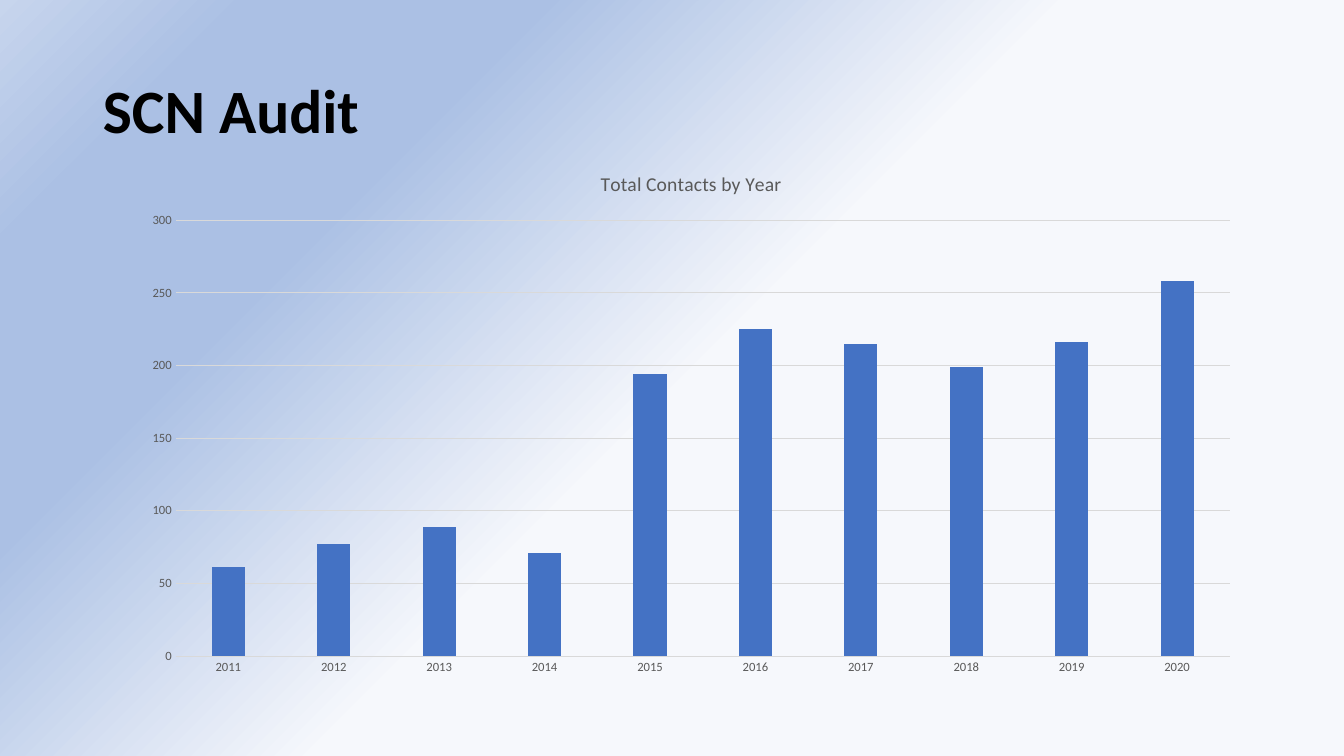
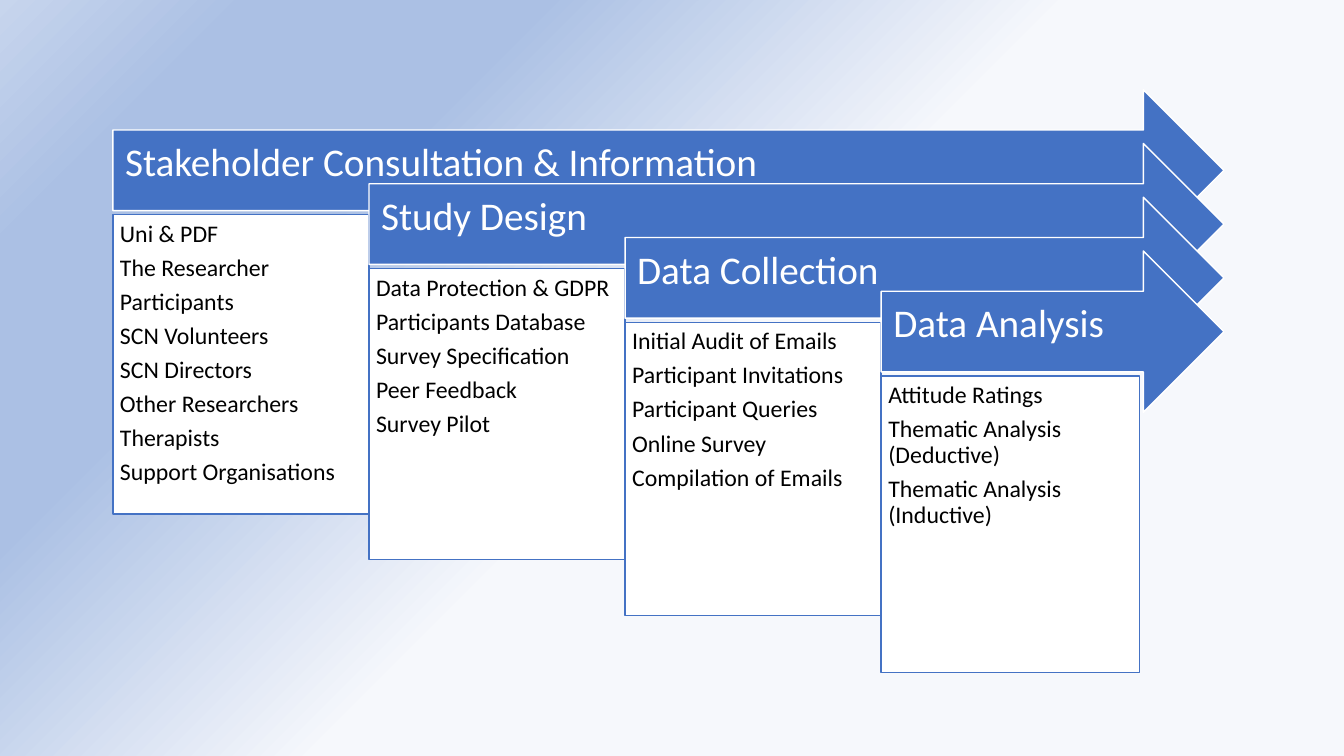
from lxml import etree
from pptx import Presentation
from pptx.chart.data import CategoryChartData
from pptx.dml.color import RGBColor
from pptx.enum.chart import XL_CHART_TYPE as ChartType, XL_TICK_MARK as Tick
from pptx.enum.shapes import MSO_SHAPE as Shape
from pptx.enum.text import MSO_ANCHOR as Anchor, PP_ALIGN as Align
from pptx.oxml.ns import qn
from pptx.util import Inches, Pt

# Content
AUDIT_TITLE = "SCN Audit"
CHART_TITLE = "Total Contacts by Year"
CONTACTS = {
    "2011": 61, "2012": 77, "2013": 89, "2014": 71, "2015": 194,
    "2016": 225, "2017": 215, "2018": 199, "2019": 216, "2020": 258,
}
# Stage heading, list width, list height, list items
STAGES = [
    ("Stakeholder Consultation & Information", 2.54, 2.97,
     ["Uni & PDF", "The Researcher", "Participants", "SCN Volunteers",
      "SCN Directors", "Other Researchers", "Therapists",
      "Support Organisations"]),
    ("Study Design", 2.54, 2.89,
     ["Data Protection & GDPR", "Participants Database",
      "Survey Specification", "Peer Feedback", "Survey Pilot"]),
    ("Data Collection", 2.54, 2.91,
     ["Initial Audit of Emails", "Participant Invitations",
      "Participant Queries", "Online Survey", "Compilation of Emails"]),
    ("Data Analysis", 2.56, 2.94,
     ["Attitude Ratings", "Thematic Analysis (Deductive)",
      "Thematic Analysis (Inductive)"]),
]


class Theme:
    font = "Calibri"
    blue, white, black = "4472C4", "FFFFFF", "000000"
    label, rule = "595959", "D9D9D9"
    backdrop = [(49, "F6F8FC"), (74, "ABC0E4"), (88, "ABC0E4"), (100, "C7D5ED")]
    backdrop_angle = 135
    title, heading, item = 44, 28, 17
    chart_title, chart_text, axis = 14, 10, 9
    line_spacing, item_gap = 0.9, 5.95


def rgb(value):
    return RGBColor.from_string(value)


def style_font(font, size, color, bold=False):
    font.name, font.size, font.bold = Theme.font, Pt(size), bold
    font.color.rgb = rgb(color)


def write_text(frame, *lines, size, color, bold=False, anchor=Anchor.TOP,
               insets=(0.1, 0.05, 0.1, 0.05), gap=0):
    """Fill a text frame with one left-aligned paragraph per line."""
    frame.word_wrap = True
    frame.vertical_anchor = anchor
    (frame.margin_left, frame.margin_top,
     frame.margin_right, frame.margin_bottom) = map(Inches, insets)
    for index, line in enumerate(lines):
        paragraph = frame.add_paragraph() if index else frame.paragraphs[0]
        paragraph.alignment = Align.LEFT
        paragraph.line_spacing = Theme.line_spacing
        paragraph.space_before, paragraph.space_after = Pt(0), Pt(gap)
        run = paragraph.add_run()
        run.text = line
        style_font(run.font, size, color, bold)


def add_box(slide, preset, box, fill, line):
    shape = slide.shapes.add_shape(preset, *map(Inches, box))
    shape.shadow.inherit = False
    shape.fill.solid()
    shape.fill.fore_color.rgb = rgb(fill)
    shape.line.color.rgb = rgb(line)
    shape.line.width = Pt(1)
    return shape


def set_backdrop(master):
    """Give every slide the same diagonal gradient."""
    fill = master.background.fill
    fill.gradient()
    fill.gradient_angle = Theme.backdrop_angle
    stops = next(master.element.iter(qn("a:gsLst")))
    for stop in list(stops):
        stops.remove(stop)
    for position, color in Theme.backdrop:
        stop = etree.SubElement(stops, qn("a:gs"), pos=str(position * 1000))
        etree.SubElement(stop, qn("a:srgbClr"), val=color)


def style_rule(line):
    line.color.rgb = rgb(Theme.rule)
    line.width = Pt(0.75)


def build_audit(prs):
    slide = prs.slides.add_slide(prs.slide_layouts[5])
    title = slide.shapes.title
    title.left, title.top, title.width, title.height = map(
        Inches, (0.92, 0.4, 11.5, 1.45))
    write_text(title.text_frame, AUDIT_TITLE, size=Theme.title,
               color=Theme.black, bold=True, anchor=Anchor.MIDDLE)

    # Yearly contacts
    data = CategoryChartData()
    data.categories = list(CONTACTS)
    data.add_series("Series 1", list(CONTACTS.values()))
    chart = slide.shapes.add_chart(
        ChartType.COLUMN_CLUSTERED,
        *map(Inches, (1.29, 1.49, 11.13, 5.31)), data).chart
    style_font(chart.font, Theme.chart_text, Theme.black)
    chart.has_legend = False
    chart.has_title = True
    heading = chart.chart_title.text_frame
    heading.text = CHART_TITLE
    style_font(heading.paragraphs[0].runs[0].font, Theme.chart_title, Theme.label)

    columns = chart.plots[0]
    columns.gap_width, columns.overlap = 219, -27
    columns.vary_by_categories = False
    contacts = columns.series[0]
    contacts.format.fill.solid()
    contacts.format.fill.fore_color.rgb = rgb(Theme.blue)

    # Axes
    years, counts = chart.category_axis, chart.value_axis
    for axis in (years, counts):
        axis.major_tick_mark = axis.minor_tick_mark = Tick.NONE
        style_font(axis.tick_labels.font, Theme.axis, Theme.label)
    style_rule(years.format.line)
    counts.format.line.fill.background()
    counts.minimum_scale, counts.maximum_scale, counts.major_unit = 0, 300, 50
    counts.has_major_gridlines = True
    style_rule(counts.major_gridlines.format.line)


def build_stages(prs):
    slide = prs.slides.add_slide(prs.slide_layouts[6])
    left, top, right = 1.12, 0.89, 12.14
    arrow_height, list_drop = 1.6, 1.24
    step_x, step_y = 2.54, arrow_height / 3
    for index, (heading, width, height, items) in enumerate(STAGES):
        x, y = left + index * step_x, top + index * step_y
        arrow = add_box(slide, Shape.RIGHT_ARROW, (x, y, right - x, arrow_height),
                        Theme.blue, Theme.white)
        write_text(arrow.text_frame, heading, size=Theme.heading,
                   color=Theme.white, anchor=Anchor.MIDDLE,
                   insets=(0.12, 0.12, 0.28, 0.25))
        details = add_box(slide, Shape.RECTANGLE, (x, y + list_drop, width, height),
                          Theme.white, Theme.blue)
        write_text(details.text_frame, *items, size=Theme.item,
                   color=Theme.black, insets=(0.07,) * 4, gap=Theme.item_gap)


def main():
    prs = Presentation()
    prs.slide_width, prs.slide_height = Inches(13.33), Inches(7.5)
    set_backdrop(prs.slide_master)
    build_audit(prs)
    build_stages(prs)
    prs.save("out.pptx")


if __name__ == "__main__":
    main()
